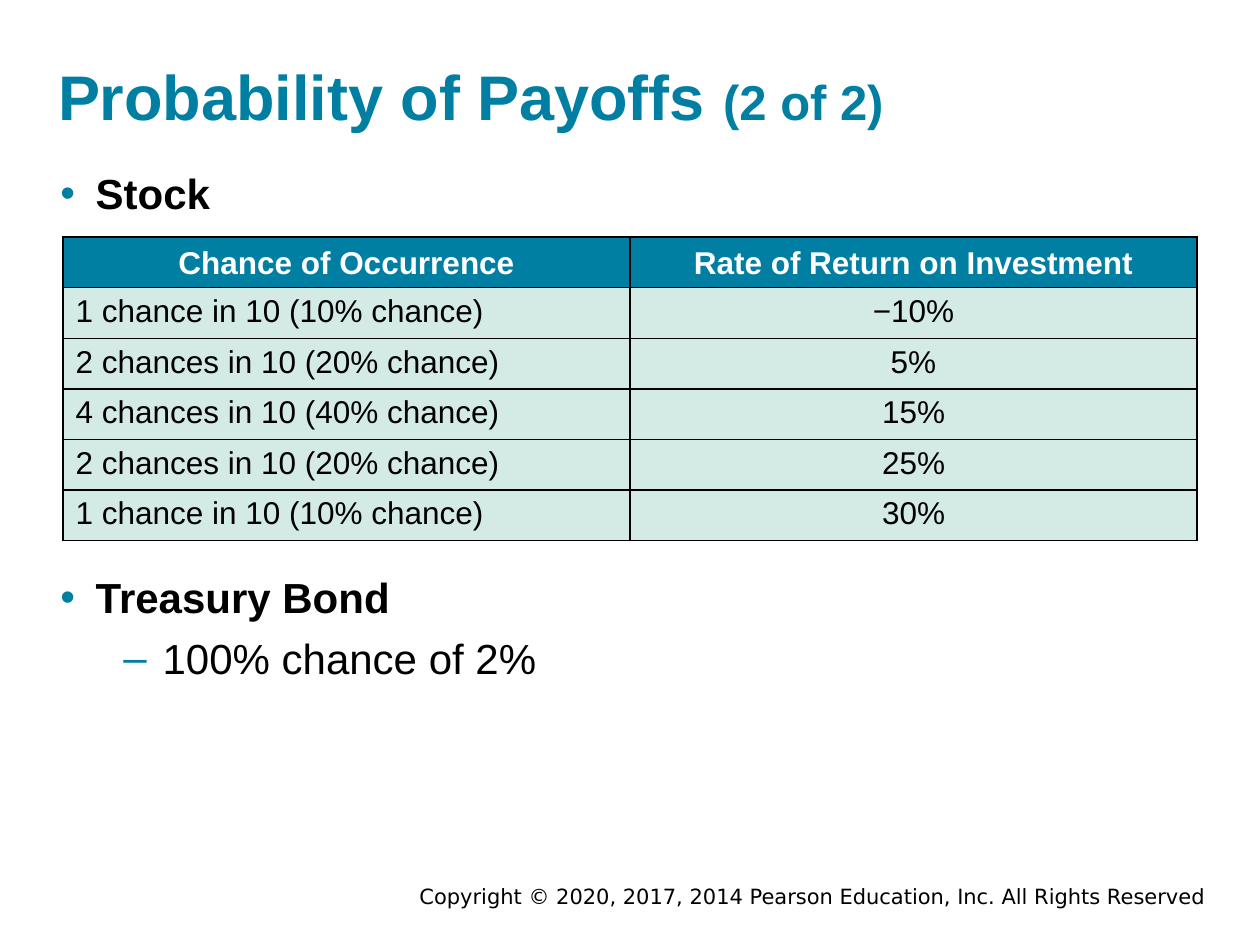
from lxml import etree
from pptx import Presentation
from pptx.dml.color import RGBColor
from pptx.enum.text import MSO_ANCHOR, PP_ALIGN
from pptx.oxml.ns import qn
from pptx.util import Cm, Pt

LEFT, CENTER, RIGHT = PP_ALIGN.LEFT, PP_ALIGN.CENTER, PP_ALIGN.RIGHT
TOP, BOTTOM = MSO_ANCHOR.TOP, MSO_ANCHOR.BOTTOM
COLORS = {"teal": "007FA3", "mint": "D4EAE4", "black": "000000", "white": "FFFFFF"}


def add_span(para, text, size, color, bold=False, font="Arial"):
    span = para.add_run()
    span.text = text
    span.font.name = font
    span.font.size = Pt(size)
    span.font.bold = bold
    span.font.color.rgb = RGBColor.from_string(COLORS[color])


def add_text_box(page, left, top, width, height, margin=0):
    box = page.shapes.add_textbox(Cm(left), Cm(top), Cm(width), Cm(height))
    frame = box.text_frame
    frame.word_wrap = True
    if margin == 0:
        frame.margin_left = frame.margin_right = 0
        frame.margin_top = frame.margin_bottom = 0
    return frame


deck = Presentation()
deck.slide_width, deck.slide_height = Cm(25.4), Cm(19.05)
page = deck.slides.add_slide(deck.slide_layouts[5])

title = page.shapes.title
title.left, title.top, title.width, title.height = Cm(1.17), Cm(1.14), Cm(22.86), Cm(1.55)
frame = title.text_frame
frame.margin_left = frame.margin_right = frame.margin_top = frame.margin_bottom = 0
frame.vertical_anchor = BOTTOM
para = frame.paragraphs[0]
para.alignment = LEFT
add_span(para, "Probability of Payoffs ", 36, "teal", True)
add_span(para, "(2 of 2)", 28, "teal", True)

bullet_boxes = [
    (3.38, 3.81, 1.07, [("Stock", 0)]),
    (11.53, 22.86, 2.26, [("Treasury Bond", 0), ("100% chance of 2%", 1)]),
]
bullet_styles = [("•", 0.71, 0.71, True), ("–", 2.06, 0.79, False)]
for top, width, height, items in bullet_boxes:
    frame = add_text_box(page, 1.22, top, width, height)
    for index, (text, level) in enumerate(items):
        para = frame.add_paragraph() if index else frame.paragraphs[0]
        symbol, indent, hanging, bold = bullet_styles[level]
        para.level = level
        para.space_before = Pt(6 if index else 0)
        properties = para._p.get_or_add_pPr()
        properties.set("marL", str(Cm(indent)))
        properties.set("indent", str(-Cm(hanging)))
        bullet_color = etree.SubElement(properties, qn("a:buClr"))
        etree.SubElement(bullet_color, qn("a:srgbClr"), val=COLORS["teal"])
        etree.SubElement(properties, qn("a:buFont"), typeface="Arial")
        etree.SubElement(properties, qn("a:buChar"), char=symbol)
        add_span(para, text, 24, "black", bold)

payoffs = [
    ("Chance of Occurrence", "Rate of Return on Investment"),
    ("1 chance in 10 (10% chance)", "−10%"),
    ("2 chances in 10 (20% chance)", "5%"),
    ("4 chances in 10 (40% chance)", "15%"),
    ("2 chances in 10 (20% chance)", "25%"),
    ("1 chance in 10 (10% chance)", "30%"),
]
table = page.shapes.add_table(
    len(payoffs), 2, Cm(1.27), Cm(4.78), Cm(22.86), Cm(6.12)
).table
for row_index, row in enumerate(payoffs):
    header = row_index == 0
    table.rows[row_index].height = Cm(1.02)
    for column_index, text in enumerate(row):
        cell = table.cell(row_index, column_index)
        properties = cell._tc.get_or_add_tcPr()
        for side in ("lnL", "lnR", "lnT", "lnB"):
            border = etree.SubElement(properties, qn(f"a:{side}"), w=str(Pt(1)))
            border_fill = etree.SubElement(border, qn("a:solidFill"))
            etree.SubElement(border_fill, qn("a:srgbClr"), val=COLORS["black"])
        cell.fill.solid()
        cell.fill.fore_color.rgb = RGBColor.from_string(COLORS["teal" if header else "mint"])
        cell.vertical_anchor = BOTTOM if header else TOP
        para = cell.text_frame.paragraphs[0]
        para.alignment = CENTER if header or column_index == 1 else LEFT
        add_span(para, text, 18, "white" if header else "black", header)

frame = add_text_box(page, 4.67, 17.68, 19.89, 0.76, margin=None)
para = frame.paragraphs[0]
para.alignment = RIGHT
add_span(
    para,
    "Copyright © 2020, 2017, 2014 Pearson Education, Inc. All Rights Reserved",
    12, "black", font="DejaVu Sans",
)

deck.save("out.pptx")
